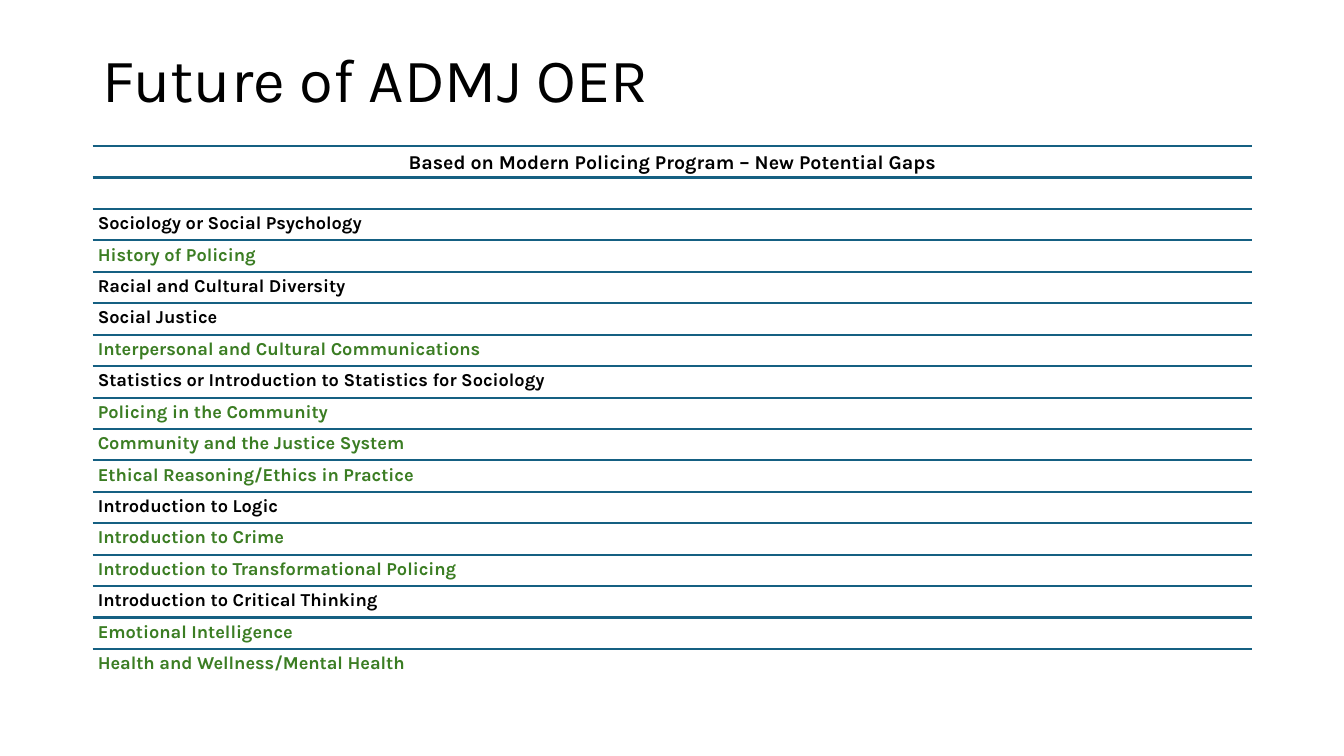
from dataclasses import dataclass

from lxml import etree
from pptx import Presentation
from pptx.dml.color import RGBColor
from pptx.enum.shapes import MSO_CONNECTOR
from pptx.enum.text import MSO_ANCHOR, PP_ALIGN
from pptx.oxml.ns import qn
from pptx.util import Inches, Pt

STRAIGHT = MSO_CONNECTOR.STRAIGHT
TOP, MIDDLE = MSO_ANCHOR.TOP, MSO_ANCHOR.MIDDLE
LEFT, CENTER = PP_ALIGN.LEFT, PP_ALIGN.CENTER

FONT = "Karla"
BLACK, GREEN, BLUE = "000000", "3B7D23", "156082"
SLIDE_W, SLIDE_H = 13.33, 7.5
GRID_LEFT, GRID_TOP = 0.92, 1.45
GRID_W, GRID_H = 11.5, 5.3


@dataclass
class Row:
    text: str = ""
    color: str = BLACK
    size: int = 13
    align: PP_ALIGN = LEFT
    inset: float = 0.05


ROWS = [
    Row("Based on Modern Policing Program – New Potential Gaps", size=14, align=CENTER, inset=0.06),
    Row(),
    Row("Sociology or Social Psychology"),
    Row("History of Policing", GREEN),
    Row("Racial and Cultural Diversity"),
    Row("Social Justice"),
    Row("Interpersonal and Cultural Communications", GREEN),
    Row("Statistics or Introduction to Statistics for Sociology"),
    Row("Policing in the Community", GREEN),
    Row("Community and the Justice System", GREEN),
    Row("Ethical Reasoning/Ethics in Practice", GREEN),
    Row("Introduction to Logic"),
    Row("Introduction to Crime", GREEN),
    Row("Introduction to Transformational Policing", GREEN),
    Row("Introduction to Critical Thinking"),
    Row("Emotional Intelligence", GREEN),
    Row("Health and Wellness/Mental Health", GREEN),
]
ROW_H = GRID_H / len(ROWS)


def rgb(color: str) -> RGBColor:
    return RGBColor.from_string(color)


def apply(target, values: dict) -> None:
    for name, value in values.items():
        setattr(target, name, value)


def add_text(shapes, row: Row, top: float, height: float, bold: bool = True,
             anchor: MSO_ANCHOR = TOP, inset_y: float = 0.05) -> None:
    box = shapes.add_textbox(Inches(GRID_LEFT), Inches(top), Inches(GRID_W), Inches(height))
    tf = box.text_frame
    apply(tf, {
        "word_wrap": True,
        "vertical_anchor": anchor,
        "margin_left": Inches(row.inset),
        "margin_right": Inches(row.inset),
        "margin_top": Inches(inset_y),
        "margin_bottom": Inches(inset_y),
    })
    p = tf.paragraphs[0]
    apply(p, {"alignment": row.align, "line_spacing": 0.9})
    r = p.add_run()
    r.text = row.text
    apply(r.font, {"name": FONT, "size": Pt(row.size), "bold": bold})
    r.font.color.rgb = rgb(row.color)


def add_rule(shapes, top: float) -> None:
    y = Inches(top)
    line = shapes.add_connector(STRAIGHT, Inches(GRID_LEFT), y, Inches(GRID_LEFT + GRID_W), y)
    line.line.width = Pt(1.5)
    line.line.color.rgb = rgb(BLUE)
    etree.SubElement(line._element.spPr, qn("a:effectLst"))


def main() -> None:
    prs = Presentation()
    apply(prs, {"slide_width": Inches(SLIDE_W), "slide_height": Inches(SLIDE_H)})
    s = prs.slides.add_slide(prs.slide_layouts[6])

    title = Row("Future of ADMJ OER", size=44, inset=0.1)
    add_text(s.shapes, title, 0.4, 0.84, bold=False, anchor=MIDDLE)

    course_list = s.shapes.add_group_shape()
    for i, row in enumerate(ROWS):
        top = GRID_TOP + i * ROW_H
        add_rule(course_list.shapes, top)
        if row.text:
            add_text(course_list.shapes, row, top, ROW_H, inset_y=row.inset)

    prs.save("out.pptx")


if __name__ == "__main__":
    main()
